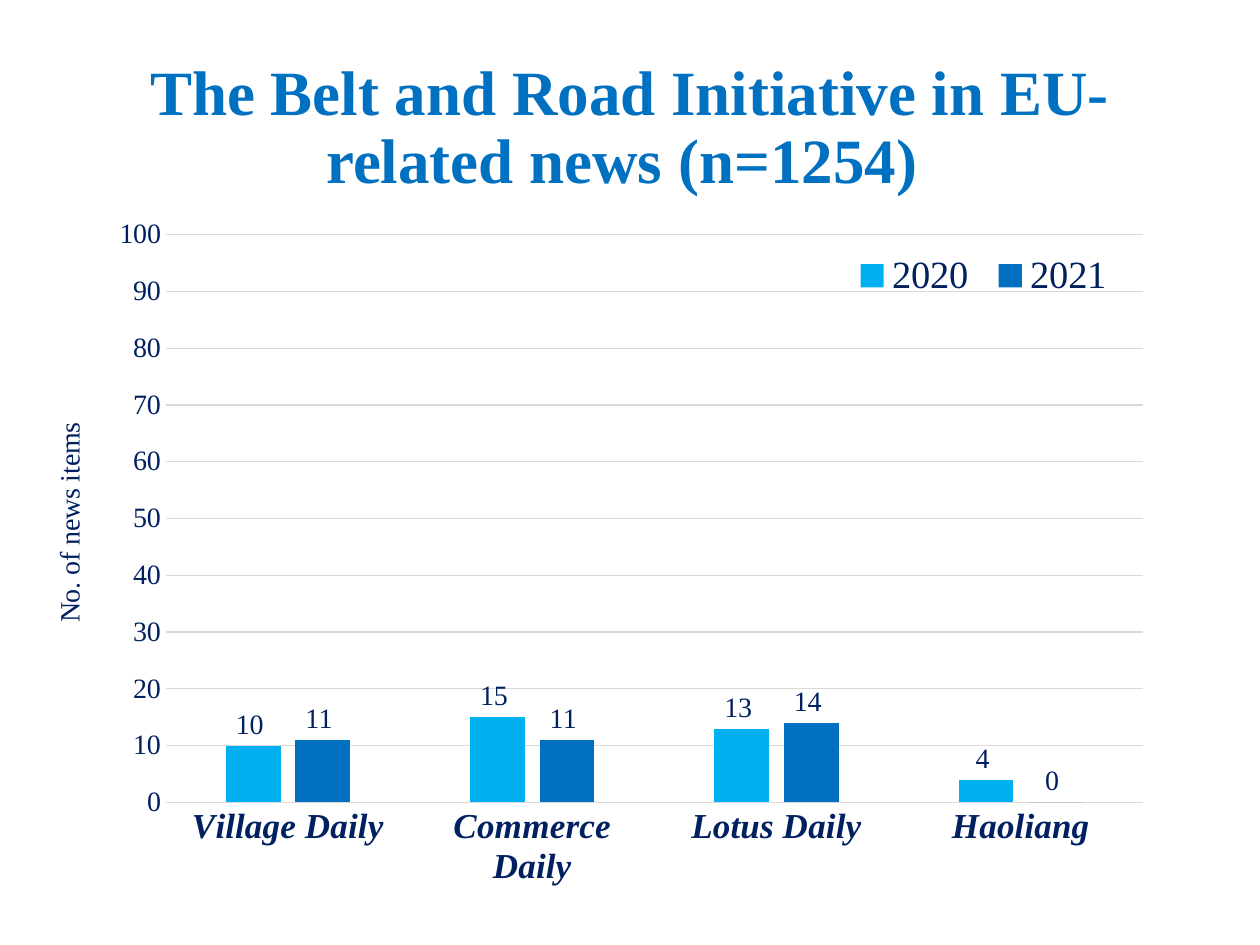
from pptx import Presentation
from pptx.chart.data import CategoryChartData
from pptx.dml.color import RGBColor
from pptx.enum.chart import XL_CHART_TYPE, XL_LABEL_POSITION, XL_LEGEND_POSITION, XL_TICK_MARK
from pptx.enum.text import MSO_ANCHOR, PP_ALIGN
from pptx.oxml import parse_xml
from pptx.oxml.ns import nsdecls, qn
from pptx.util import Cm, Pt

NAVY = "002060"
GRAY = "D9D9D9"


def paint(color_format, color):
    color_format.rgb = RGBColor.from_string(color)


def place(element, index, **values):
    for old in element.findall(qn("c:layout")):
        element.remove(old)
    modes = {"x": "xMode", "y": "yMode"}
    parts = ['<c:layoutTarget val="inner"/>'] if element.tag == qn("c:plotArea") else []
    parts += [f'<c:{mode} val="edge"/>' for mode in modes.values()]
    parts += [f'<c:{name} val="{value}"/>' for name, value in values.items()]
    element.insert(index, parse_xml(
        f'<c:layout {nsdecls("c")}><c:manualLayout>{"".join(parts)}</c:manualLayout></c:layout>'))


deck = Presentation()
deck.slide_width, deck.slide_height = Cm(25.4), Cm(19.05)
page = deck.slides.add_slide(deck.slide_layouts[6])

box = page.shapes.add_textbox(Cm(1.75), Cm(1.6), Cm(21.89), Cm(2.01))
box.text_frame.word_wrap = True
box.text_frame.vertical_anchor = MSO_ANCHOR.MIDDLE
para = box.text_frame.paragraphs[0]
para.alignment = PP_ALIGN.CENTER
para.line_spacing = 0.9
span = para.add_run()
span.text = "The Belt and Road Initiative in EU-related news (n=1254) "

data = CategoryChartData()
data.categories = ["Village Daily", "Commerce Daily", "Lotus Daily", "Haoliang"]
data.add_series("2020", [10, 15, 13, 4])
data.add_series("2021", [11, 11, 14, 0])
chart = page.shapes.add_chart(
    XL_CHART_TYPE.COLUMN_CLUSTERED, Cm(0.46), Cm(3.99), Cm(23.62), Cm(14.27), data).chart
chart.has_title = False
chart.has_legend = True
legend = chart.legend
legend.position = XL_LEGEND_POSITION.TOP
legend.include_in_layout = True

plot = chart.plots[0]
plot.gap_width = 219
plot.overlap = -27
plot.vary_by_categories = False

category_axis = chart.category_axis
category_axis.format.line.width = Pt(0.75)
paint(category_axis.format.line.color, GRAY)

value_axis = chart.value_axis
value_settings = {"minimum_scale": 0, "maximum_scale": 100, "major_unit": 10,
                  "has_major_gridlines": True, "has_title": True}
for name, value in value_settings.items():
    setattr(value_axis, name, value)
value_axis.format.line.fill.background()
grid_line = value_axis.major_gridlines.format.line
grid_line.width = Pt(0.75)
paint(grid_line.color, GRAY)
value_axis.tick_labels.number_format = "#,##0"
value_axis.tick_labels.number_format_is_linked = False
for axis in (category_axis, value_axis):
    axis.major_tick_mark = axis.minor_tick_mark = XL_TICK_MARK.NONE

axis_title = value_axis.axis_title
axis_title.text_frame.text = "No. of news items"
axis_title_font = axis_title.text_frame.paragraphs[0].runs[0].font

fonts = [
    (span.font, "0070C0", {"size": Pt(36), "bold": True}),
    (chart.font, NAVY, {"size": Pt(16)}),
    (category_axis.tick_labels.font, NAVY, {"size": Pt(20), "bold": True, "italic": True}),
    (value_axis.tick_labels.font, NAVY, {"size": Pt(16), "bold": False}),
    (axis_title_font, NAVY, {"size": Pt(16), "bold": False}),
    (legend.font, NAVY, {"size": Pt(22), "bold": False}),
]
for series, color in zip(plot.series, ("00B0F0", "0070C0")):
    series.format.fill.solid()
    paint(series.format.fill.fore_color, color)
    series.invert_if_negative = False
    labels = series.data_labels
    label_settings = {"show_value": True, "position": XL_LABEL_POSITION.OUTSIDE_END,
                      "number_format": r"0_);[Red]\(0\)", "number_format_is_linked": False}
    for name, value in label_settings.items():
        setattr(labels, name, value)
    fonts.append((labels.font, NAVY, {"size": Pt(16), "bold": False}))

for font, color, settings in fonts:
    paint(font.color, color)
    for name, value in {"name": "Times New Roman", **settings}.items():
        setattr(font, name, value)

place(plot._element.getparent(), 0, x=0.122, y=0.052, w=0.834, h=0.802)
place(legend._element, 1, x=0.7, y=0.07, w=0.24, h=0.08)
place(axis_title._element, 1, x=0.02, y=0.31)

deck.save("out.pptx")
